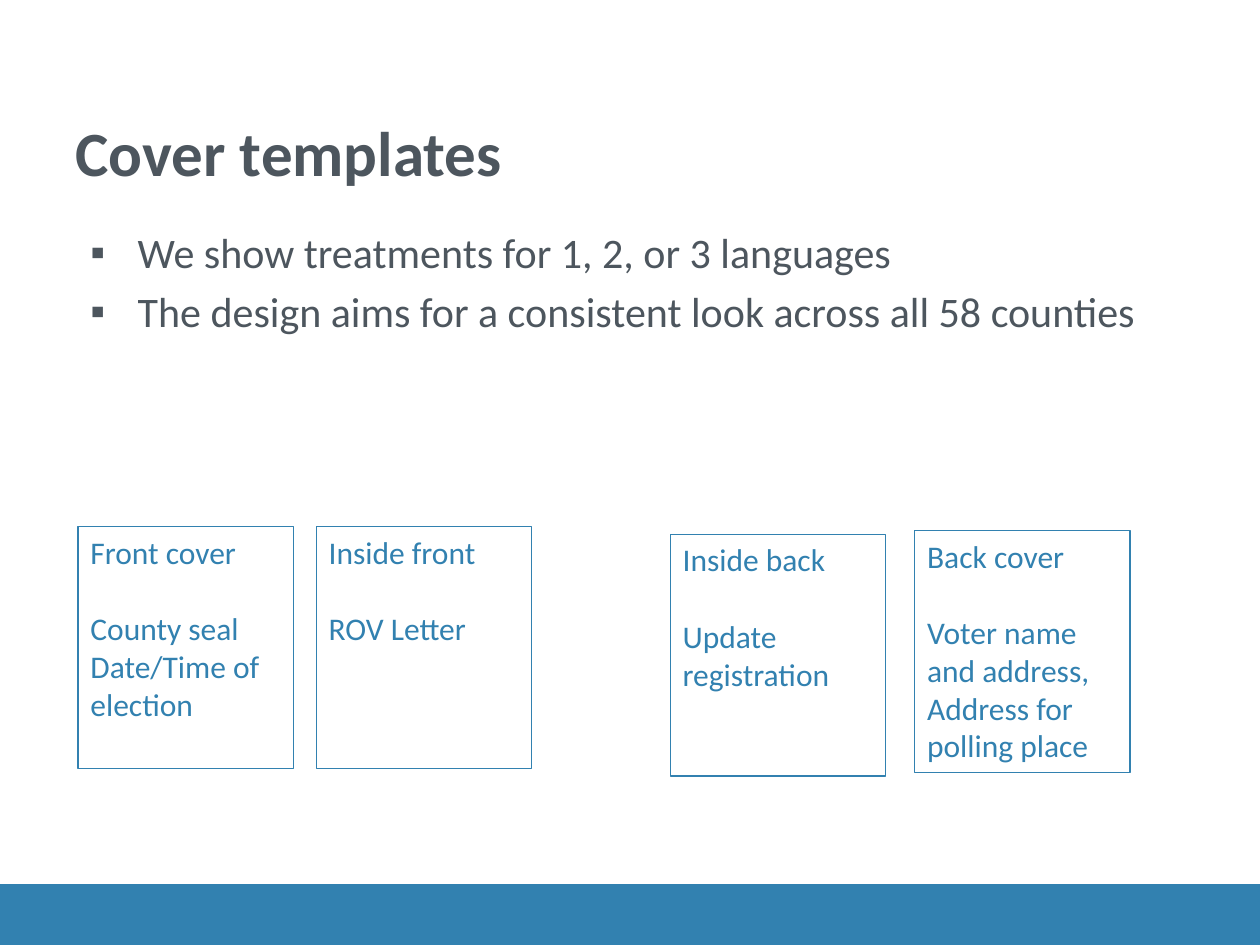
"""Build the cover templates slide."""
from lxml import etree
from pptx import Presentation
from pptx.dml.color import RGBColor
from pptx.enum.shapes import MSO_SHAPE
from pptx.enum.text import MSO_ANCHOR, PP_ALIGN
from pptx.oxml.ns import qn
from pptx.util import Pt

RECT = MSO_SHAPE.RECTANGLE
TOP, BOTTOM = MSO_ANCHOR.TOP, MSO_ANCHOR.BOTTOM
LEFT = PP_ALIGN.LEFT
BLUE, GREY = "3281B0", "4D565E"
FONT = "Calibri"
PANEL_W, PANEL_H = 123, 138.2
BLANK_LINE = 22
PANELS = [
    (522.7, 303.1, "Back cover", ["Voter name and address,", "Address for polling place"]),
    (44.6, 301, "Front cover", ["County seal", "Date/Time of election"]),
    (180.7, 301, "Inside front", ["ROV Letter"]),
    (383, 305.3, "Inside back", ["Update registration"]),
]


def rgb(value):
    """Turn a hex string into a colour."""
    return RGBColor.from_string(value)


def add_run(p, text, size, color, bold=False):
    """Add one formatted run to a paragraph."""
    r = p.add_run()
    r.text = text
    r.font.name = FONT
    r.font.size = Pt(size)
    r.font.bold = bold
    r.font.color.rgb = rgb(color)


def add_paragraph(tf, index):
    """Return the first paragraph, or a new one after it."""
    p = tf.add_paragraph() if index else tf.paragraphs[0]
    p.alignment = LEFT
    return p


def add_rect(s, x, y, w, h, fill=None):
    """Add a blue-outlined rectangle with an optional fill."""
    sp = s.shapes.add_shape(RECT, Pt(x), Pt(y), Pt(w), Pt(h))
    sp.shadow.inherit = False
    sp.line.color.rgb = rgb(BLUE)
    sp.line.width = Pt(0.75)
    if fill:
        sp.fill.solid()
        sp.fill.fore_color.rgb = rgb(fill)
    else:
        sp.fill.background()
    return sp


def add_textbox(s, x, y, w, h, anchor):
    """Add a wrapping text box and return its text frame."""
    tf = s.shapes.add_textbox(Pt(x), Pt(y), Pt(w), Pt(h)).text_frame
    tf.word_wrap = True
    tf.vertical_anchor = anchor
    return tf


def set_bullet(p, indent):
    """Give a paragraph a square bullet with a hanging indent."""
    pPr = p._p.get_or_add_pPr()
    pPr.set("marL", str(Pt(indent)))
    pPr.set("indent", str(-Pt(indent)))
    etree.SubElement(pPr, qn("a:buFont")).set("typeface", "Arial")
    etree.SubElement(pPr, qn("a:buChar")).set("char", "▪")


def add_title(s, text):
    """Add the slide title."""
    tf = add_textbox(s, 36, 21.6, 648, 90, BOTTOM)
    add_run(add_paragraph(tf, 0), text, 36, GREY, bold=True)


def add_bullets(s, items):
    """Add the bulleted list."""
    tf = add_textbox(s, 44.6, 126, 639.4, 356.4, TOP)
    for i, text in enumerate(items):
        p = add_paragraph(tf, i)
        if i:
            p.space_before = Pt(4.8)
        set_bullet(p, 27)
        add_run(p, text, 24, GREY)


def add_panel(s, x, y, heading, lines):
    """Add one cover panel: a heading, a gap and its contents."""
    tf = add_rect(s, x, y, PANEL_W, PANEL_H).text_frame
    tf.word_wrap = True
    tf.vertical_anchor = TOP
    for i, text in enumerate([heading, *lines]):
        p = add_paragraph(tf, i)
        if i == 1:
            p.space_before = Pt(BLANK_LINE)
        add_run(p, text, 18, BLUE)


def main():
    """Build and save the slide."""
    prs = Presentation()
    prs.slide_width, prs.slide_height = Pt(720), Pt(540)
    s = prs.slides.add_slide(prs.slide_layouts[6])
    add_rect(s, 0, 505.4, 720, 36, BLUE)
    add_title(s, "Cover templates")
    add_bullets(s, [
        "We show treatments for 1, 2, or 3 languages",
        "The design aims for a consistent look across all 58 counties",
    ])
    for panel in PANELS:
        add_panel(s, *panel)
    prs.save("out.pptx")


if __name__ == "__main__":
    main()
